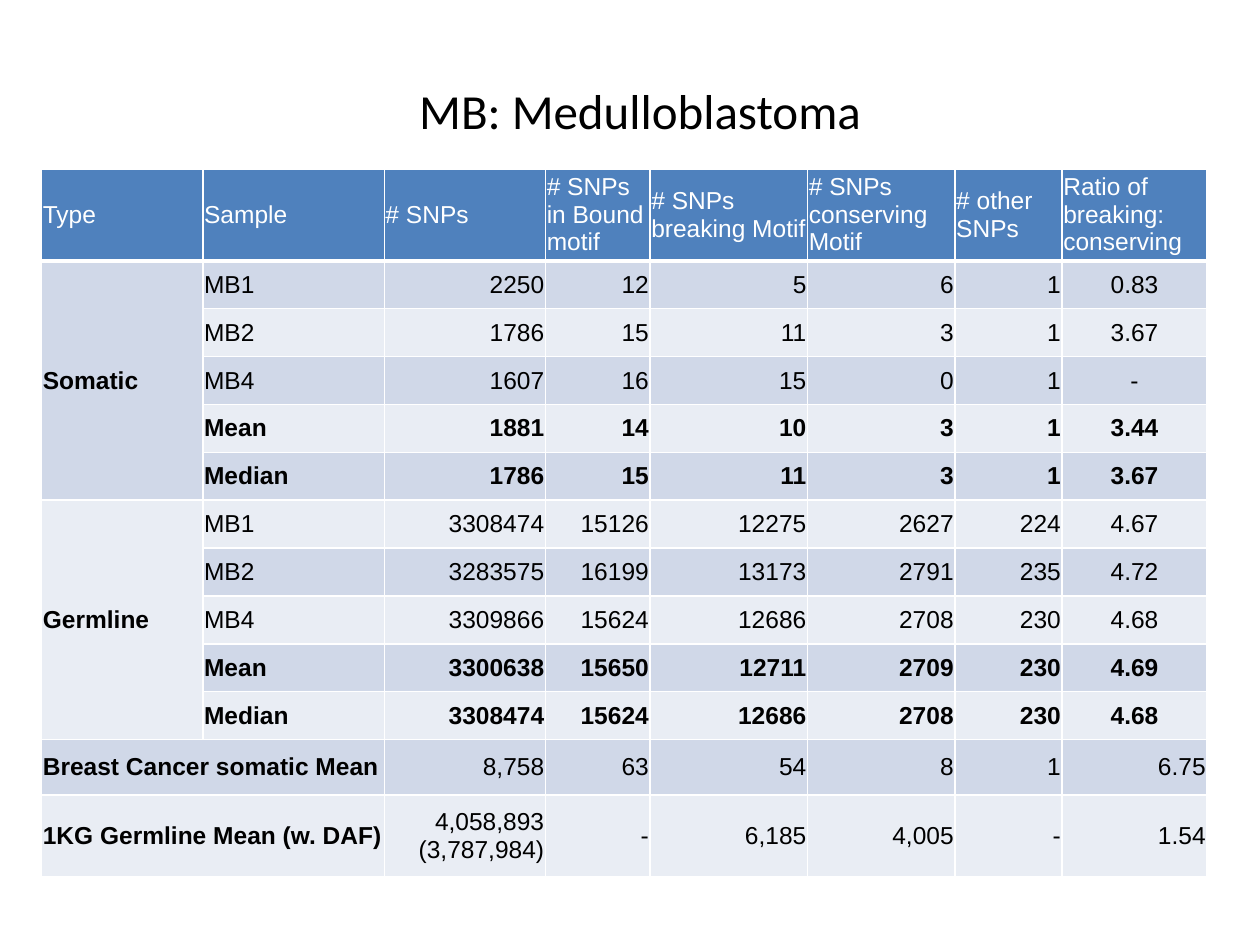
from pptx import Presentation
from pptx.dml.color import RGBColor as Rgb
from pptx.enum.text import MSO_ANCHOR as Anchor, PP_ALIGN as Align
from pptx.oxml.ns import qn
from pptx.util import Inches, Pt
from lxml.etree import SubElement as Sub

COLORS = {
    "head": "4F81BD",
    "dark": "D0D8E8",
    "light": "E9EDF4",
    "text": "000000",
    "white": "FFFFFF",
}
WIDTHS = [1.28, 1.44, 1.28, 0.83, 1.25, 1.17, 0.85, 1.15]
HEIGHTS = [0.73] + [0.38] * 10 + [0.44, 0.65]
MERGES = [(1, 0, 5, 0), (6, 0, 10, 0), (11, 0, 11, 1), (12, 0, 12, 1)]
ROWS = [
    ["Type", "Sample", "# SNPs", "# SNPs in Bound motif", "# SNPs breaking Motif",
     "# SNPs conserving Motif", "# other SNPs", "Ratio of breaking:\nconserving"],
    ["Somatic", "MB1", "2250", "12", "5", "6", "1", "0.83"],
    ["", "MB2", "1786", "15", "11", "3", "1", "3.67"],
    ["", "MB4", "1607", "16", "15", "0", "1", "-"],
    ["", "Mean", "1881", "14", "10", "3", "1", "3.44"],
    ["", "Median", "1786", "15", "11", "3", "1", "3.67"],
    ["Germline", "MB1", "3308474", "15126", "12275", "2627", "224", "4.67"],
    ["", "MB2", "3283575", "16199", "13173", "2791", "235", "4.72"],
    ["", "MB4", "3309866", "15624", "12686", "2708", "230", "4.68"],
    ["", "Mean", "3300638", "15650", "12711", "2709", "230", "4.69"],
    ["", "Median", "3308474", "15624", "12686", "2708", "230", "4.68"],
    ["Breast Cancer somatic Mean", "", "8,758", "63", "54", "8", "1", "6.75"],
    ["1KG Germline Mean (w. DAF)", "", "4,058,893 (3,787,984)", "-", "6,185", "4,005", "-", "1.54"],
]


def style(frame, font, size, color, align, bold=False):
    for para in frame.paragraphs:
        para.alignment = align
        for run in para.runs:
            run.font.name = font
            run.font.size = Pt(size)
            run.font.bold = bold
            run.font.color.rgb = Rgb.from_string(COLORS[color])


def add_title(slide):
    box = slide.shapes.add_textbox(Inches(0.58), Inches(0.25), Inches(9), Inches(1.25))
    frame = box.text_frame
    frame.word_wrap = True
    frame.vertical_anchor = Anchor.MIDDLE
    frame.text = "MB: Medulloblastoma"
    style(frame, "Calibri", 28, "text", Align.CENTER)


def set_edges(cell, row):
    props = cell._tc.get_or_add_tcPr()
    for side in "LRTB":
        thick = (row, side) in [(0, "B"), (1, "T")]
        line = Sub(props, qn(f"a:ln{side}"), w=str(Pt(3 if thick else 1)))
        Sub(Sub(line, qn("a:solidFill")), qn("a:srgbClr"), val=COLORS["white"])


def get_align(row, col):
    if row == 0 or col < 2:
        return Align.LEFT
    if col == 7 and row < 11:
        return Align.CENTER
    return Align.RIGHT


def fill_cell(cell, row, col, text):
    set_edges(cell, row)
    shade = "head" if row == 0 else "dark" if row % 2 else "light"
    cell.fill.solid()
    cell.fill.fore_color.rgb = Rgb.from_string(COLORS[shade])
    cell.margin_left = cell.margin_right = Inches(0.01)
    cell.margin_top = cell.margin_bottom = 0
    cell.vertical_anchor = Anchor.MIDDLE
    if text:
        cell.text_frame.text = text
        bold = row > 0 and (col == 0 or ROWS[row][1] in ("Mean", "Median"))
        color = "text" if row else "white"
        style(cell.text_frame, "Arial", 14, color, get_align(row, col), bold)


def add_grid(slide):
    frame = slide.shapes.add_table(
        len(ROWS), len(WIDTHS), Inches(0.33), Inches(1.34),
        Inches(sum(WIDTHS)), Inches(sum(HEIGHTS)))
    table = frame.table
    for col, width in zip(table.columns, WIDTHS):
        col.width = Inches(width)
    for row, height in zip(table.rows, HEIGHTS):
        row.height = Inches(height)
    for top, left, bottom, right in MERGES:
        table.cell(top, left).merge(table.cell(bottom, right))
    for row, texts in enumerate(ROWS):
        for col, text in enumerate(texts):
            fill_cell(table.cell(row, col), row, col, text)


def main():
    deck = Presentation()
    deck.slide_width = Inches(10)
    deck.slide_height = Inches(7.5)
    slide = deck.slides.add_slide(deck.slide_layouts[6])
    add_title(slide)
    add_grid(slide)
    deck.save("out.pptx")


if __name__ == "__main__":
    main()
